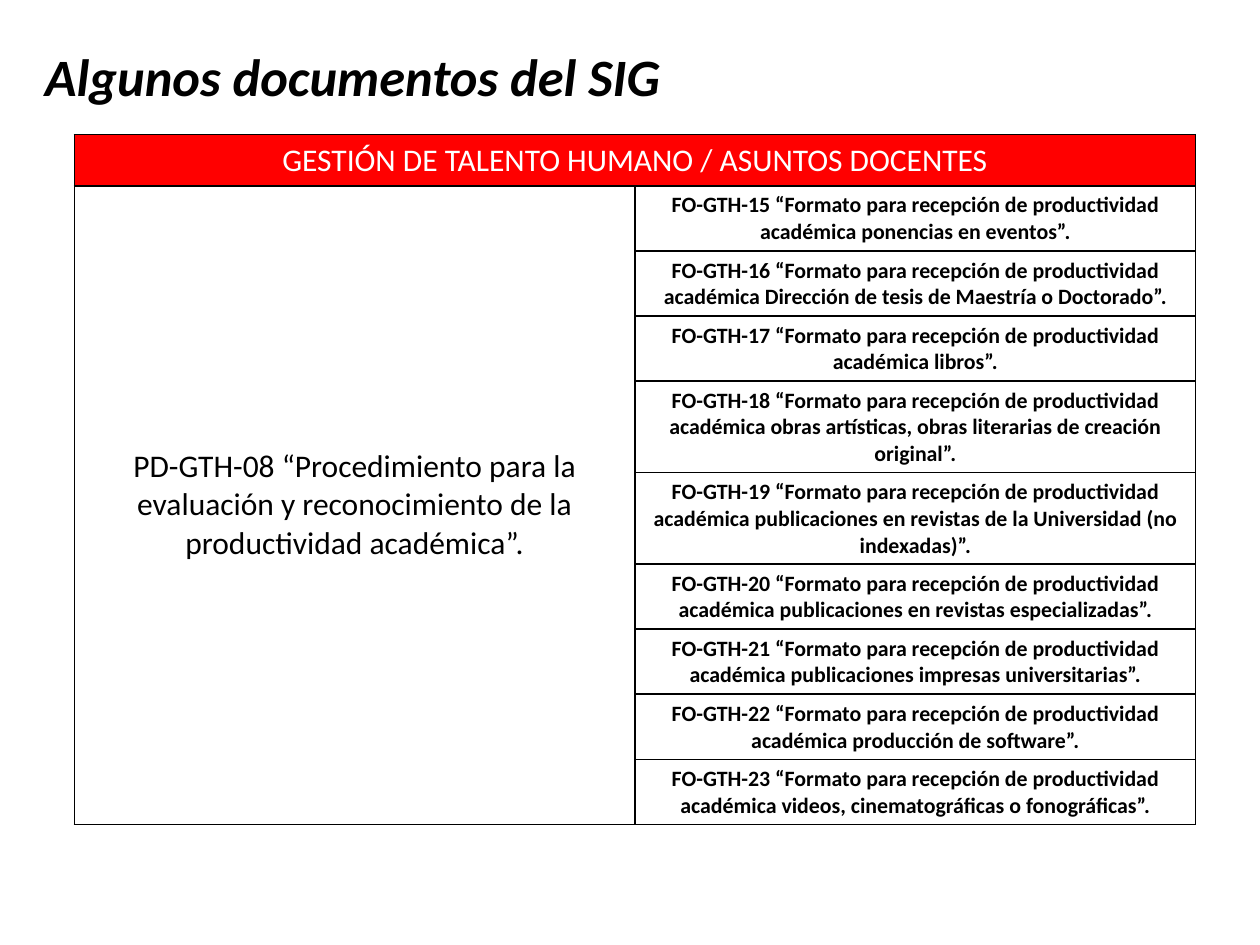
"""Build the slide listing the teaching-affairs documents of the SIG."""
from pptx import Presentation
from pptx.dml.color import RGBColor
from pptx.enum.text import MSO_ANCHOR, MSO_AUTO_SIZE, PP_ALIGN
from pptx.oxml import parse_xml
from pptx.oxml.ns import nsdecls
from pptx.util import Pt

COLORS = {"text": "000000", "border": "000000", "header": "FF0000", "header_text": "FFFFFF"}
FORMAT_SUBJECTS = [
    "ponencias en eventos",
    "Dirección de tesis de Maestría o Doctorado",
    "libros",
    "obras artísticas, obras literarias de creación original",
    "publicaciones en revistas de la Universidad (no indexadas)",
    "publicaciones en revistas especializadas",
    "publicaciones impresas universitarias",
    "producción de software",
    "videos, cinematográficas o fonográficas",
]


def write(frame, text, size, color="text", bold=False, italic=False):
    paragraph = frame.paragraphs[0]
    paragraph.alignment = PP_ALIGN.CENTER
    run = paragraph.add_run()
    run.text = text
    run.font.name = "Calibri"
    run.font.size = Pt(size)
    run.font.bold = bold
    run.font.italic = italic
    run.font.color.rgb = RGBColor.from_string(COLORS[color])


def add_borders(cell):
    properties = cell._tc.get_or_add_tcPr()
    for side in ("lnL", "lnR", "lnT", "lnB"):
        properties.append(parse_xml(
            f'<a:{side} {nsdecls("a")} w="{Pt(1)}"><a:solidFill>'
            f'<a:srgbClr val="{COLORS["border"]}"/></a:solidFill></a:{side}>'))


presentation = Presentation()
presentation.slide_width, presentation.slide_height = Pt(720), Pt(540)
slide = presentation.slides.add_slide(presentation.slide_layouts[5])

title = slide.shapes.title
title.left, title.top, title.width, title.height = Pt(14.4), Pt(21), Pt(374.4), Pt(44)
title.text_frame.auto_size = MSO_AUTO_SIZE.SHAPE_TO_FIT_TEXT
write(title.text_frame, "Algunos documentos del SIG", 30, bold=True, italic=True)

row_count = len(FORMAT_SUBJECTS) + 1
documents_frame = slide.shapes.add_table(row_count, 2, Pt(42.5), Pt(77), Pt(640.8), Pt(394))
documents = documents_frame.table
for row in documents.rows:
    row.height = Pt(29.2)
documents_frame.height = Pt(394)

for cell in documents.iter_cells():
    add_borders(cell)
    cell.fill.background()
    cell.vertical_anchor = MSO_ANCHOR.MIDDLE

header = documents.cell(0, 0)
header.merge(documents.cell(0, 1))
header.fill.solid()
header.fill.fore_color.rgb = RGBColor.from_string(COLORS["header"])
header.vertical_anchor = MSO_ANCHOR.TOP
write(header.text_frame, "GESTIÓN DE TALENTO HUMANO / ASUNTOS DOCENTES", 18, color="header_text")

procedure = documents.cell(1, 0)
procedure.merge(documents.cell(row_count - 1, 0))
write(procedure.text_frame,
      "PD-GTH-08 “Procedimiento para la evaluación y reconocimiento de la productividad académica”.", 18)

for row_index, subject in enumerate(FORMAT_SUBJECTS, start=1):
    write(documents.cell(row_index, 1).text_frame,
          f"FO-GTH-{row_index + 14} “Formato para recepción de productividad académica {subject}”.",
          12.5, bold=True)

presentation.save("out.pptx")
